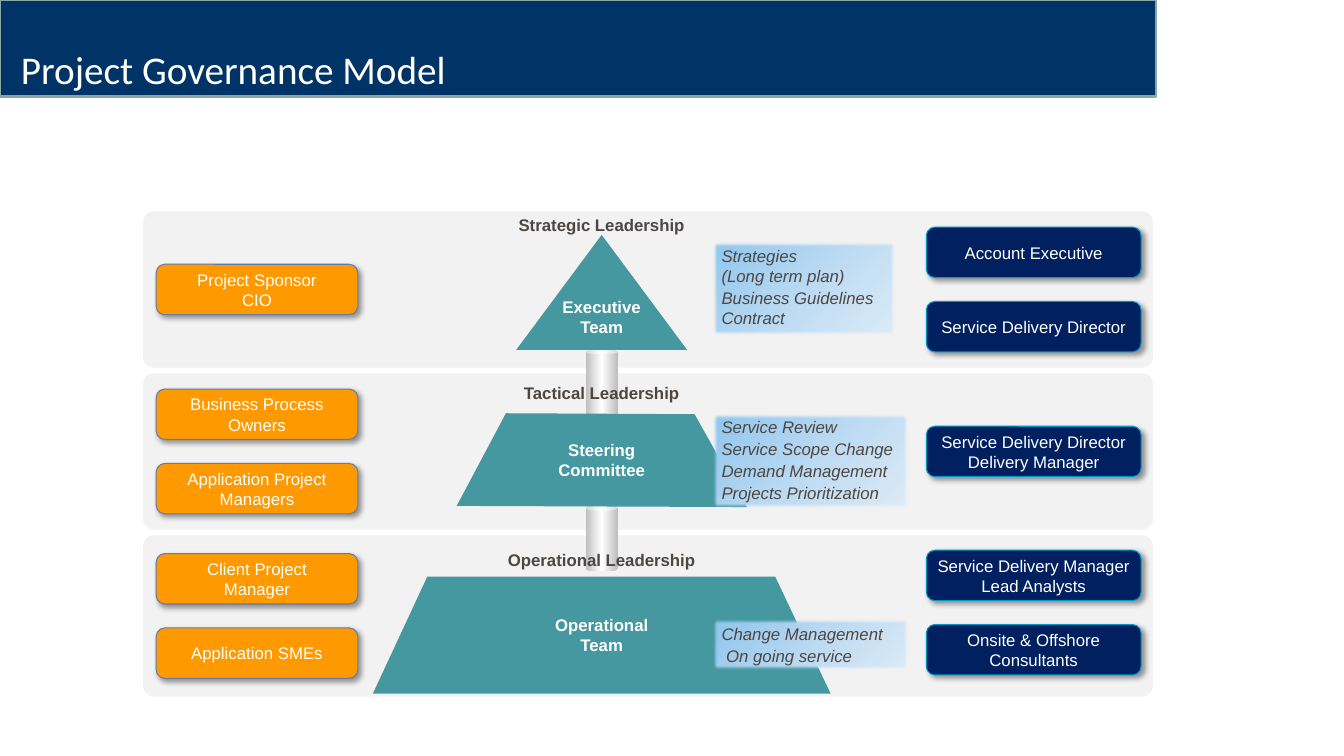
"""Build the project governance model slide."""
from pptx import Presentation
from pptx.dml.color import RGBColor
from pptx.enum.shapes import MSO_SHAPE
from pptx.enum.text import MSO_ANCHOR, PP_ALIGN
from pptx.oxml import parse_xml
from pptx.oxml.ns import nsdecls, qn
from pptx.util import Pt

TITLE = "Project Governance Model"
TIERS = [
    {
        "label": ("Strategic Leadership", 160.6),
        "team": ("Executive\vTeam", 226.1),
        "client": (["Project Sponsor\nCIO"], 0),
        "vendor": (["Account Executive", "Service Delivery Director"], 0),
        "note": ("Strategies\v(Long term plan)\nBusiness Guidelines Contract",
                 172.1, 131.8, 68.4, MSO_ANCHOR.TOP),
        "band_height": 111.6,
    },
    {
        "label": ("Tactical Leadership", 280.8),
        "team": ("Steering\vCommittee", 328.3),
        "client": (["Business Process\vOwners", "Application Project\nManagers"], 0),
        "vendor": (["Service Delivery Director\nDelivery Manager"], 0),
        "note": ("Service Review\nService Scope Change\nDemand Management\n"
                 "Projects Prioritization", 294.5, 141.1, 69.8, MSO_ANCHOR.TOP),
        "band_height": 111.6,
    },
    {
        "label": ("Operational Leadership", 399.6),
        "team": ("Operational\vTeam", 453.6),
        "client": (["Client Project\vManager", "Application SMEs"], 0),
        "vendor": (["Service Delivery Manager\nLead Analysts",
                    "Onsite & Offshore\nConsultants"], -2.4),
        "note": ("Change Management\n On going service",
                 441.4, 141.1, 38.2, MSO_ANCHOR.MIDDLE),
        "band_height": 115.2,
    },
]
TRAPEZOIDS = [
    [(326.2, 361.4), (533.5, 362.2), (496.1, 295.9), (361.4, 295.2)],
    [(593.3, 495.4), (553.7, 411.8), (305.3, 411.8), (266.4, 495.4)],
]
PILLARS = [(249.8, 0.14), (360.7, 0.18)]

THEME = {
    "header": "003366", "header_line": "8AA6A8", "band": "F2F2F2",
    "pyramid": "4597A0", "light": "FFFFFF", "dark": "4E4641",
    "pillar": ("BEBEBE", "FFFFFF", "BEBEBE"),
    "note": ("8DC6EE", "BBDAF3", "DEECF8"),
    "client": ("FF9900", "627BAB"), "vendor": ("002060", "0098C7"),
    "title_font": "Calibri", "body_font": "Arial",
    "title_size": 28, "body_size": 12,
}
BAND_LEFT, BAND_TOP, BAND_WIDTH, BAND_PITCH = 102.2, 151, 721.4, 115.7
ROLE_COLUMNS = {"client": (111.6, 144), "vendor": (661.7, 153.4)}
ROLE_HEIGHT, ROLE_PITCH = 36, 53.1
AXIS, PILLAR_WIDTH, PILLAR_HEIGHT = 429.8, 23, 47.5
TEAM_SIZE, LABEL_SIZE = (120, 36), (180, 21.6)
NOTE_LEFT = 508.3
SHADOW = ('<a:outerShdw %s blurRad="50800" dist="38100" dir="2700000" algn="tl" '
          'rotWithShape="0"><a:srgbClr val="000000"><a:alpha val="40000"/>'
          '</a:srgbClr></a:outerShdw>')
SOFT_EDGE = '<a:softEdge %s rad="31750"/>'


def rgb(name):
    return RGBColor.from_string(THEME.get(name, name))


def paint(shape, fill, line=None, line_width=0.75):
    """Give a shape a flat fill and an optional outline."""
    shape.shadow.inherit = False
    shape.fill.solid()
    shape.fill.fore_color.rgb = rgb(fill)
    if line:
        shape.line.color.rgb = rgb(line)
        shape.line.width = Pt(line_width)
    else:
        shape.line.fill.background()


def blend(shape, colours, degrees):
    """Replace the fill with evenly spaced gradient stops."""
    paint(shape, colours[0])
    shape.fill.gradient()
    gradient = shape.element.spPr.find(qn("a:gradFill"))
    stops = gradient.find(qn("a:gsLst"))
    for stop in list(stops):
        stops.remove(stop)
    for index, colour in enumerate(colours):
        position = index * 100000 // (len(colours) - 1)
        stops.append(parse_xml(f'<a:gs {nsdecls("a")} pos="{position}">'
                               f'<a:srgbClr val="{colour}"/></a:gs>'))
    gradient.find(qn("a:lin")).set("ang", str(degrees * 60000))


def add_effect(shape, effect):
    shape.element.spPr.find(qn("a:effectLst")).append(parse_xml(effect % nsdecls("a")))


def write(shape, text, colour="light", align=PP_ALIGN.CENTER, anchor=MSO_ANCHOR.MIDDLE,
          wrap=False, bold=False, italic=False, kind="body", space_before=0):
    """Put formatted text into a shape."""
    frame = shape.text_frame
    frame.text = text
    frame.word_wrap = wrap
    frame.vertical_anchor = anchor
    for index, paragraph in enumerate(frame.paragraphs):
        paragraph.alignment = align
        if index and space_before:
            paragraph.space_before = Pt(space_before)
        for run in paragraph.runs:
            run.font.name = THEME[f"{kind}_font"]
            run.font.size = Pt(THEME[f"{kind}_size"])
            run.font.color.rgb = rgb(colour)
            run.font.bold = bold
            run.font.italic = italic


def add_preset(slide, preset, left, top, width, height, adjustment=None):
    shape = slide.shapes.add_shape(preset, Pt(left), Pt(top), Pt(width), Pt(height))
    if adjustment is not None:
        shape.adjustments[0] = adjustment
    return shape


def add_caption(slide, text, middle, size, colour):
    """Add bold text centred on the pyramid axis."""
    width, height = size
    caption = slide.shapes.add_textbox(
        Pt(AXIS - width / 2), Pt(middle - height / 2), Pt(width), Pt(height))
    write(caption, text, colour, bold=True)


def add_header(slide):
    header = add_preset(slide, MSO_SHAPE.RECTANGLE, 0, 0, 825.8, 69.1)
    paint(header, "header", "header_line", 2)
    title = slide.shapes.add_textbox(Pt(7.9), Pt(5.8), Pt(828), Pt(63.4))
    write(title, TITLE, align=PP_ALIGN.LEFT, anchor=MSO_ANCHOR.BOTTOM, wrap=True, kind="title")
    title.text_frame.paragraphs[0].line_spacing = 1.2


def add_pyramid(slide):
    for top, rim in PILLARS:
        pillar = add_preset(slide, MSO_SHAPE.CAN, AXIS - PILLAR_WIDTH / 2, top,
                            PILLAR_WIDTH, PILLAR_HEIGHT, rim)
        blend(pillar, THEME["pillar"], 0)
    peak = add_preset(slide, MSO_SHAPE.ISOSCELES_TRIANGLE, AXIS - 61, 167.8, 122, 82.1)
    paint(peak, "pyramid")
    for corners in TRAPEZOIDS:
        start, *rest = [(Pt(x), Pt(y)) for x, y in corners]
        outline = slide.shapes.build_freeform(*start)
        outline.add_line_segments(rest, close=True)
        paint(outline.convert_to_shape(), "pyramid")


def add_roles(slide, tier, side, middle):
    """Stack the role boxes of one side around the middle of their band."""
    roles, shift = tier[side]
    left, width = ROLE_COLUMNS[side]
    first = middle + shift - ((len(roles) - 1) * ROLE_PITCH + ROLE_HEIGHT) / 2
    for index, role in enumerate(roles):
        box = add_preset(slide, MSO_SHAPE.ROUNDED_RECTANGLE, left,
                         first + index * ROLE_PITCH, width, ROLE_HEIGHT, 0.17)
        paint(box, *THEME[side])
        add_effect(box, SHADOW)
        write(box, role)


def add_note(slide, text, top, width, height, anchor):
    note = add_preset(slide, MSO_SHAPE.RECTANGLE, NOTE_LEFT, top, width, height)
    blend(note, THEME["note"], 45)
    add_effect(note, SOFT_EDGE)
    write(note, text, "dark", PP_ALIGN.LEFT, anchor, wrap=True, italic=True, space_before=1.2)


def main():
    deck = Presentation()
    deck.slide_width, deck.slide_height = Pt(960), Pt(540)
    slide = deck.slides.add_slide(deck.slide_layouts[6])
    add_header(slide)
    tops = [BAND_TOP + index * BAND_PITCH for index in range(len(TIERS))]
    for tier, top in zip(TIERS, tops):
        band = add_preset(slide, MSO_SHAPE.ROUNDED_RECTANGLE, BAND_LEFT, top,
                          BAND_WIDTH, tier["band_height"], 0.07)
        paint(band, "band")
    add_pyramid(slide)
    for tier, top in zip(TIERS, tops):
        for side in ROLE_COLUMNS:
            add_roles(slide, tier, side, top + tier["band_height"] / 2)
        add_note(slide, *tier["note"])
        add_caption(slide, *tier["team"], TEAM_SIZE, "light")
        add_caption(slide, *tier["label"], LABEL_SIZE, "dark")
    deck.save("out.pptx")


if __name__ == "__main__":
    main()
